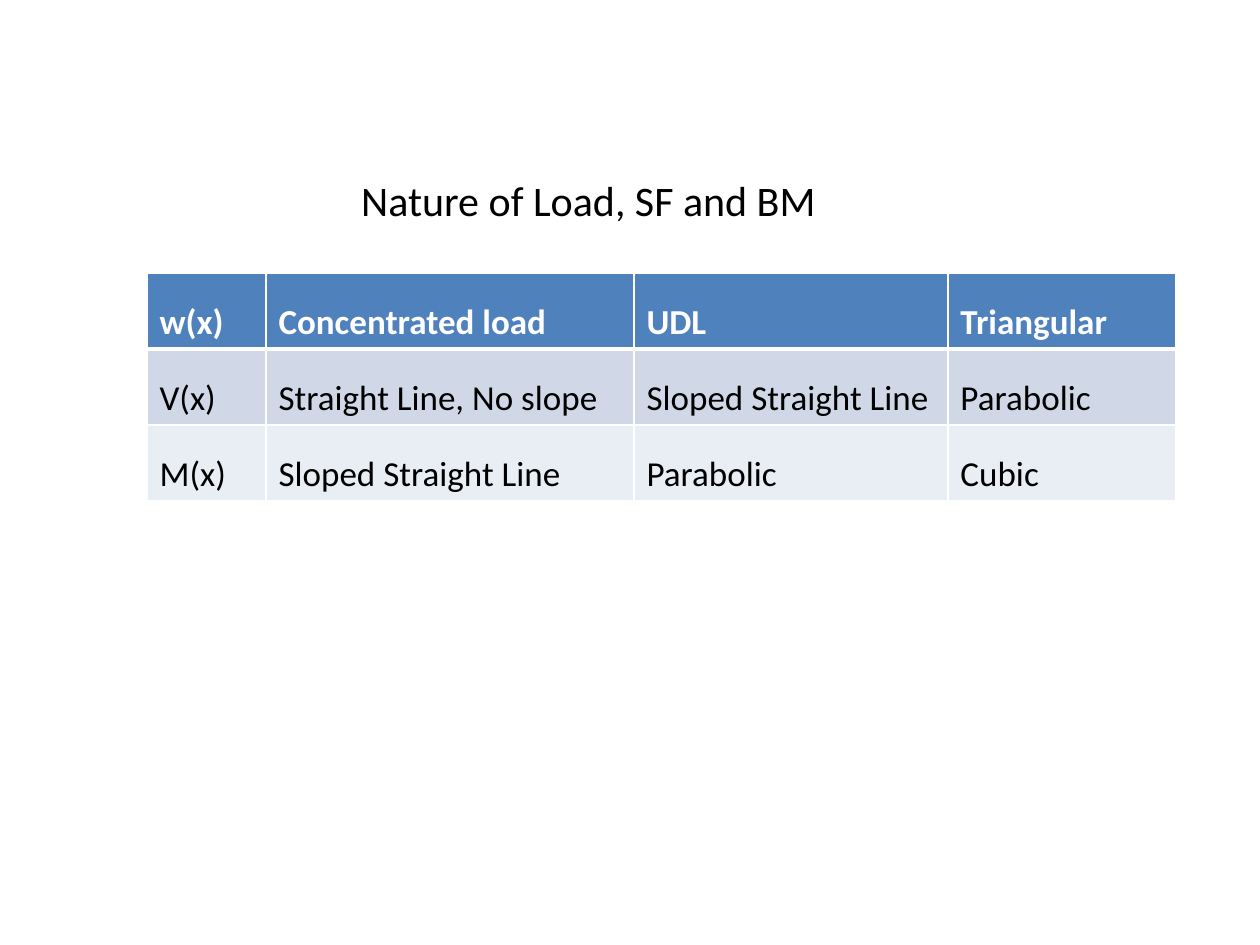
from dataclasses import dataclass

from lxml.etree import SubElement
from pptx import Presentation
from pptx.dml.color import RGBColor as RGB
from pptx.enum.text import MSO_ANCHOR as Anchor, MSO_AUTO_SIZE as AutoSize, PP_ALIGN as Align
from pptx.oxml.ns import qn
from pptx.util import Emu, Pt

PX_PER_INCH = 126


@dataclass(frozen=True)
class Theme:
    font: str = "Calibri"
    title_size: int = 24
    cell_size: int = 20
    ink: str = "000000"
    border: str = "FFFFFF"
    thin: int = 1
    thick: int = 3


@dataclass(frozen=True)
class Row:
    texts: tuple[str, ...]
    fill: str
    color: str
    bold: bool
    top: int
    bottom: int


THEME = Theme()
COLUMNS = (119, 368, 314, 228)
ROW_HEIGHT = 76
ROWS = (
    Row(("w(x)", "Concentrated load", "UDL", "Triangular"),
        "4F81BD", "FFFFFF", True, THEME.thin, THEME.thick),
    Row(("V(x)", "Straight Line, No slope", "Sloped Straight Line", "Parabolic"),
        "D0D8E8", THEME.ink, False, THEME.thick, THEME.thin),
    Row(("M(x)", "Sloped Straight Line", "Parabolic", "Cubic"),
        "E9EDF4", THEME.ink, False, THEME.thin, THEME.thin),
)


def px(n: int) -> Emu:
    return Emu(round(n * 914400 / PX_PER_INCH))


def format_run(r, size: int, color: str, bold: bool = False) -> None:
    r.font.name = THEME.font
    r.font.size = Pt(size)
    r.font.bold = bold
    r.font.color.rgb = RGB.from_string(color)


def add_border(cell, side: str, width: int) -> None:
    ln = SubElement(cell._tc.get_or_add_tcPr(), qn(f"a:ln{side}"), w=str(Pt(width)))
    fill = SubElement(ln, qn("a:solidFill"))
    SubElement(fill, qn("a:srgbClr"), val=THEME.border)


def fill_cell(cell, text: str, row: Row) -> None:
    widths = {"L": THEME.thin, "R": THEME.thin, "T": row.top, "B": row.bottom}
    for side, width in widths.items():
        add_border(cell, side, width)
    cell.fill.solid()
    cell.fill.fore_color.rgb = RGB.from_string(row.fill)
    cell.text_frame.text = text
    p = cell.text_frame.paragraphs[0]
    p.line_spacing = 1.5
    p.space_after = Pt(6)
    format_run(p.runs[0], THEME.cell_size, row.color, row.bold)


def add_load_table(slide, left: int, top: int) -> None:
    frame = slide.shapes.add_table(len(ROWS), len(COLUMNS), px(left), px(top),
                                   px(sum(COLUMNS)), px(ROW_HEIGHT * len(ROWS)))
    table = frame.table
    for column, width in zip(table.columns, COLUMNS):
        column.width = px(width)
    for table_row, row in zip(table.rows, ROWS):
        table_row.height = px(ROW_HEIGHT)
        for cell, text in zip(table_row.cells, row.texts):
            fill_cell(cell, text, row)


def set_title(slide, text: str, left: int, top: int, width: int, height: int) -> None:
    sp = slide.shapes.title
    sp.left, sp.top, sp.width, sp.height = map(px, (left, top, width, height))
    tf = sp.text_frame
    tf.text = text
    tf.word_wrap = True
    tf.auto_size = AutoSize.SHAPE_TO_FIT_TEXT
    tf.vertical_anchor = Anchor.TOP
    p = tf.paragraphs[0]
    p.alignment = Align.CENTER
    format_run(p.runs[0], THEME.title_size, THEME.ink)


def main() -> None:
    prs = Presentation()
    prs.slide_width, prs.slide_height = px(1260), px(945)
    slide = prs.slides.add_slide(prs.slide_layouts.get_by_name("Title Only"))
    set_title(slide, "Nature of Load, SF and BM", 305, 168, 567, 63)
    add_load_table(slide, 147, 273)
    prs.save("out.pptx")


if __name__ == "__main__":
    main()
